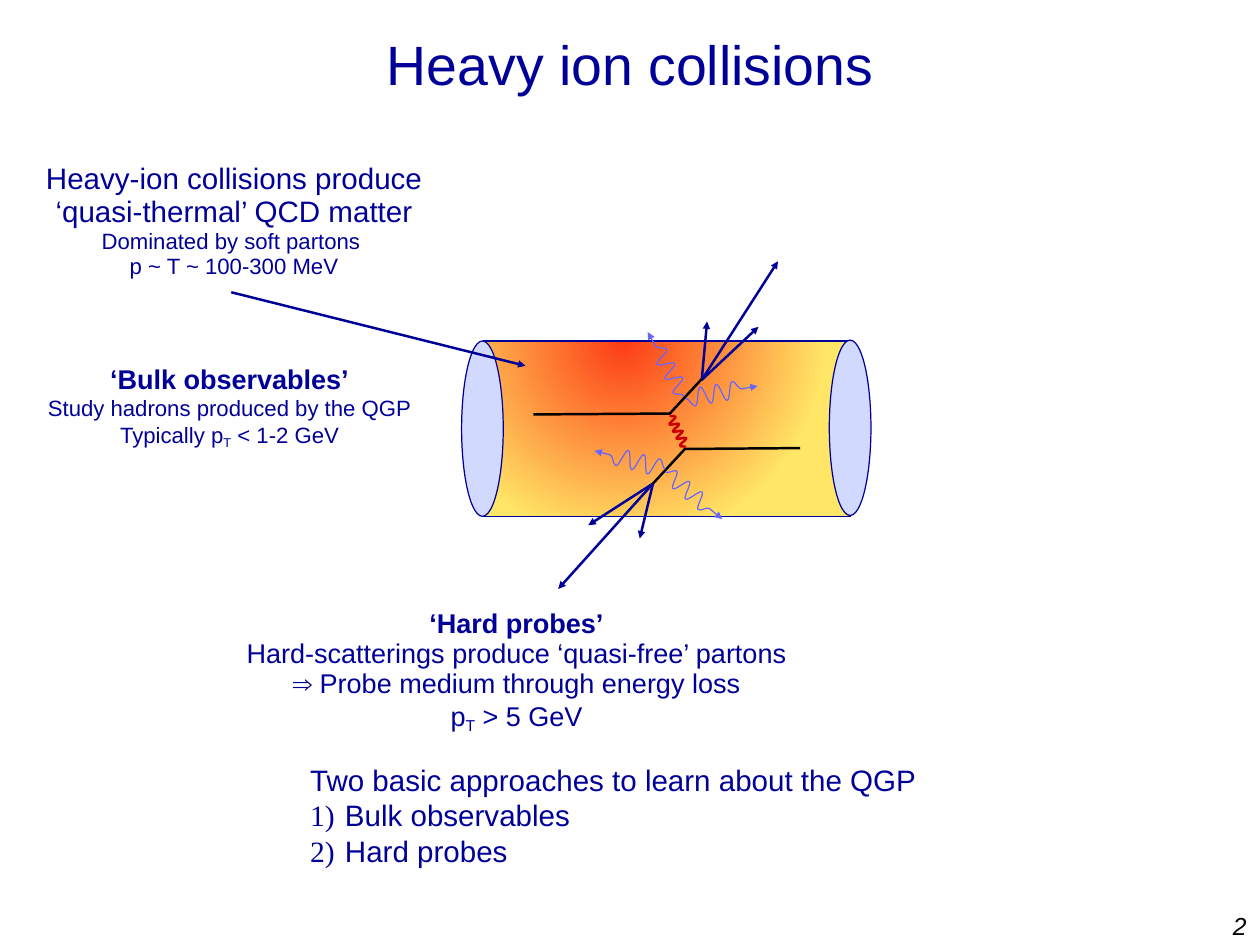
from math import hypot

from lxml.etree import SubElement
from pptx import Presentation
from pptx.dml.color import RGBColor
from pptx.enum.shapes import MSO_CONNECTOR, MSO_SHAPE
from pptx.enum.text import MSO_ANCHOR, PP_ALIGN
from pptx.oxml.ns import qn
from pptx.util import Inches, Pt

COLORS = {
    "navy": "000099", "black": "000000", "red": "CC0000", "violet": "6666FF",
    "hot": "FD3C15", "warm": "FFE667", "disc": "D1D9FF",
}
WAVE_STEPS = 9


def style_line(shape, color, width, arrow=False):
    """Set colour, width and optional end arrow, without a shadow."""
    shape.line.color.rgb = RGBColor.from_string(COLORS[color])
    shape.line.width = Pt(width)
    properties = shape.element.spPr
    if arrow:
        SubElement(properties.find(qn("a:ln")), qn("a:tailEnd"), type="triangle")
    SubElement(properties, qn("a:effectLst"))


def add_text(box, lines, align=PP_ALIGN.CENTER, spacing=None, color="navy", inset=0.07, wrap=False):
    """Add a text box; lines hold (text, size, bold, space before), and _T marks a subscript T."""
    frame = slide.shapes.add_textbox(*map(Inches, box)).text_frame
    frame.word_wrap = wrap
    frame.margin_left = frame.margin_right = Inches(inset)
    frame.margin_top = frame.margin_bottom = Inches(inset)
    for index, (text, size, bold, before) in enumerate(lines):
        paragraph = frame.add_paragraph() if index else frame.paragraphs[0]
        start, subscript, end = text.partition("_T")
        paragraph.text = start
        if subscript:
            lowered = paragraph.add_run()
            lowered.text = "T"
            lowered.font._element.set("baseline", "-20000")
            paragraph.add_run().text = end
        paragraph.alignment = align
        paragraph.space_before = Pt(before)
        if spacing:
            paragraph.line_spacing = spacing
        paragraph.font.name = "Arial"
        paragraph.font.size = Pt(size)
        paragraph.font.bold = bold
        paragraph.font.color.rgb = RGBColor.from_string(COLORS[color])
    return frame


presentation = Presentation()
presentation.slide_width = Inches(14.22)
presentation.slide_height = Inches(10.67)
slide = presentation.slides.add_slide(presentation.slide_layouts[6])

title = add_text((1.04, 0.13, 12.14, 1.25), [("Heavy ion collisions", 45, False, 0)],
                 spacing=0.93, inset=0.06, wrap=True)
title.vertical_anchor = MSO_ANCHOR.MIDDLE
page_number = add_text((13.85, 10.22, 0.28, 0.42), [("2", 20, False, 0)], color="black", inset=0.06)
page_number.paragraphs[0].font.italic = True

add_text((2.66, 6.81, 6.34, 1.57), [
    ("‘Hard probes’", 22, True, 0),
    ("Hard-scatterings produce ‘quasi-free’ partons", 22, False, 0),
    ("⇒ Probe medium through energy loss", 22, False, 0),
    ("p_T > 5 GeV", 22, False, 0),
], spacing=0.93)
add_text((0.44, 1.77, 4.4, 1.45), [
    ("Heavy-ion collisions produce\v‘quasi-thermal’ QCD matter", 24, False, 2),
    ("Dominated by soft partons \vp ~ T ~ 100-300 MeV", 18, False, 1),
], spacing=0.93)

# Cylinder of hot matter between the two end discs
medium = slide.shapes.add_shape(MSO_SHAPE.RECTANGLE, Inches(5.46), Inches(3.85), Inches(4.14), Inches(1.98))
medium.fill.gradient()
for stop, color in zip(medium.fill.gradient_stops, ("hot", "warm")):
    stop.color.rgb = RGBColor.from_string(COLORS[color])
gradient = medium.element.spPr.find(qn("a:gradFill"))
gradient.remove(gradient.find(qn("a:lin")))
circle = SubElement(gradient, qn("a:path"), {"path": "circle"})
SubElement(circle, qn("a:fillToRect"), l="38000", t="-20000", r="62000", b="120000")
style_line(medium, "navy", 1)

for left, top in ((5.21, 3.85), (9.36, 3.84)):
    disc = slide.shapes.add_shape(MSO_SHAPE.OVAL, Inches(left), Inches(top), Inches(0.47), Inches(1.98))
    disc.fill.solid()
    disc.fill.fore_color.rgb = RGBColor.from_string(COLORS["disc"])
    style_line(disc, "navy", 1)

# Each source point sends straight arrows to its targets
arrow_fans = {
    (2.61, 3.3): [(5.93, 4.13)],                              # pointer to the medium
    (7.92, 4.29): [(8.78, 2.95), (8.56, 3.69), (7.98, 3.63)],  # upper jet
    (7.37, 5.46): [(6.3, 6.65), (6.64, 5.93), (7.22, 6.08)],   # lower jet
}
for source, targets in arrow_fans.items():
    for target in targets:
        arrow = slide.shapes.add_connector(MSO_CONNECTOR.STRAIGHT, *map(Inches, source + target))
        style_line(arrow, "navy", 2, arrow=True)

scattered_partons = [
    [(6.02, 4.68), (7.56, 4.67), (7.92, 4.28)],
    [(9.03, 5.06), (7.73, 5.07), (7.37, 5.46)],
]
for start, *bends in scattered_partons:
    builder = slide.shapes.build_freeform(*map(Inches, start))
    builder.add_line_segments([(Inches(x), Inches(y)) for x, y in bends], close=False)
    parton = builder.convert_to_shape()
    parton.fill.background()
    style_line(parton, "black", 2)

# Gluons: start, end, signed height of the first swing, swings, colour, width, arrow
gluons = [
    ((7.74, 5.05), (7.56, 4.69), -0.05, 8, "red", 2, False),
    ((7.72, 4.47), (7.31, 3.75), -0.09, 6, "violet", 1, True),
    ((7.51, 5.3), (6.71, 5.09), 0.1, 6, "violet", 1, True),
    ((7.51, 5.33), (8.15, 5.86), -0.09, 6, "violet", 1, True),
    ((7.74, 4.5), (8.55, 4.36), 0.1, 6, "violet", 1, True),
]
for (x, y), (end_x, end_y), height, swings, color, width, arrow in gluons:
    dx, dy = end_x - x, end_y - y
    length = hypot(dx, dy)
    # Swings alternate sides of the axis; the remaining steps run straight along it
    offsets = [0] + [height * (-1) ** swing for swing in range(swings)]
    offsets += [0] * (WAVE_STEPS + 1 - len(offsets))
    wave = []
    for step in range(WAVE_STEPS):
        before, after = offsets[step:step + 2]
        # Two control points level with the ends make each curve smooth
        for advance, offset in ((0.4, before), (0.6, after), (1, after)):
            along = (step + advance) / WAVE_STEPS
            wave.append((Inches(x + dx * along - dy / length * offset),
                         Inches(y + dy * along + dx / length * offset)))
    builder = slide.shapes.build_freeform(Inches(x), Inches(y))
    builder.add_line_segments(wave, close=False)
    gluon = builder.convert_to_shape()
    gluon.fill.background()
    style_line(gluon, color, width, arrow)
    # Merge every three line segments into one Bézier curve
    segments = list(gluon.element.iter(qn("a:lnTo")))
    outline = segments[0].getparent()
    for first in range(0, len(segments), 3):
        curve = SubElement(outline, qn("a:cubicBezTo"))
        for segment in segments[first:first + 3]:
            curve.append(segment[0])
            outline.remove(segment)

add_text((0.43, 4.02, 4.32, 1.12), [
    ("‘Bulk observables’", 22, True, 0),
    ("Study hadrons produced by the QGP", 18, False, 0),
    ("Typically p_T < 1-2 GeV", 18, False, 0),
])

# A space in the serif font opens each numbered line and sets the font of its number
approaches = add_text((3.43, 8.53, 7.08, 1.3), [
    (text, 24, False, 0) for text in ("Two basic approaches to learn about the QGP", " ", " ")
], align=PP_ALIGN.LEFT)
for paragraph, approach in zip(approaches.paragraphs, (None, "Bulk observables", "Hard probes")):
    properties = paragraph._p.get_or_add_pPr()
    properties.set("marL", str(Inches(0.31)))
    properties.set("indent", str(Inches(-0.31)))
    if approach:
        paragraph.runs[0].font.name = "Times New Roman"
        paragraph.add_run().text = approach
        bullet_color = SubElement(properties, qn("a:buClr"))
        SubElement(bullet_color, qn("a:srgbClr"), val=COLORS["navy"])
        bullet_font = SubElement(properties, qn("a:buFont"), typeface="Times New Roman")
        number = SubElement(properties, qn("a:buAutoNum"), type="arabicParenR")
        text_defaults = properties.find(qn("a:defRPr"))
        for part in (bullet_color, bullet_font, number):
            text_defaults.addprevious(part)

presentation.save("out.pptx")
